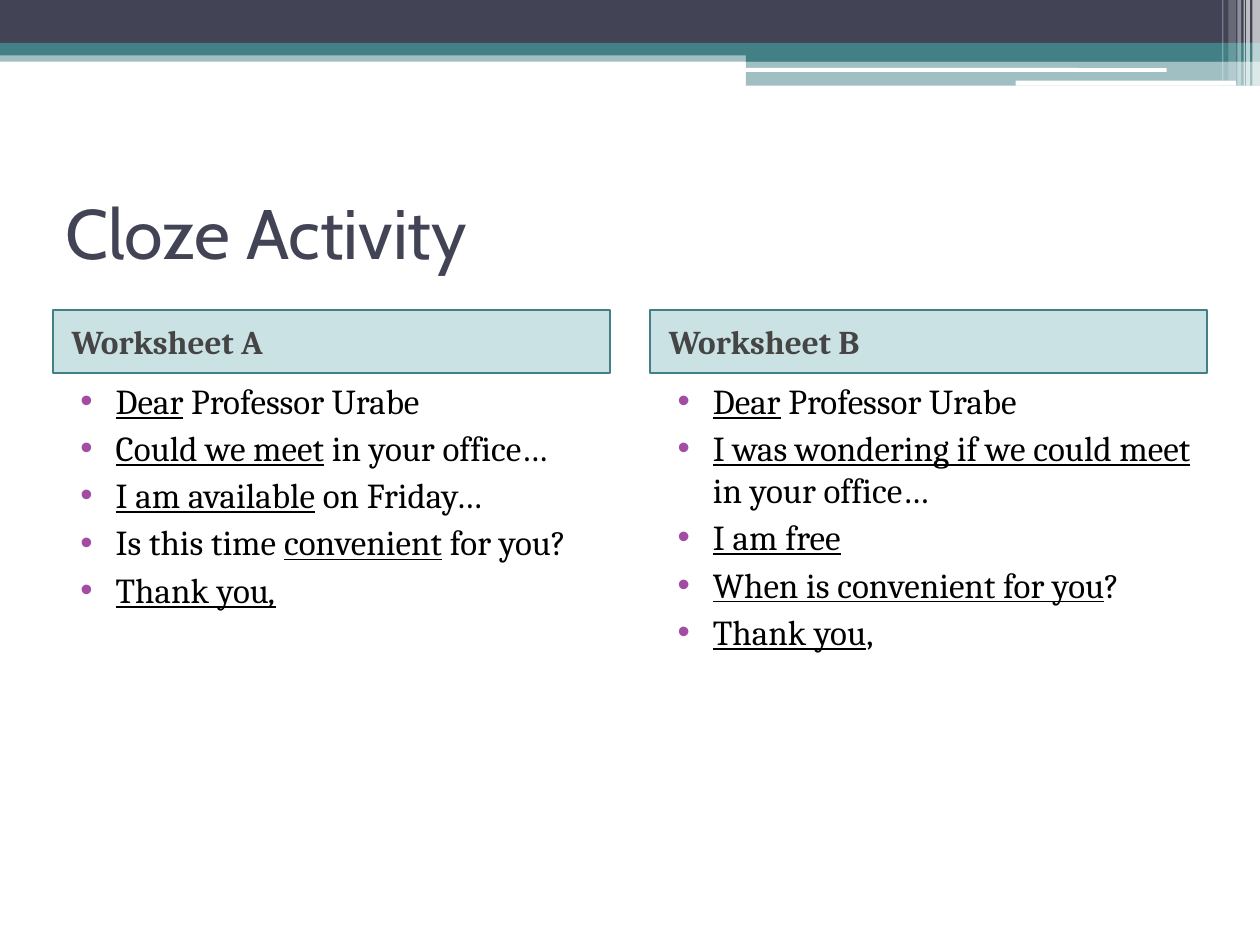
import pptx
import pptx.dml.color
import pptx.enum.shapes
import pptx.enum.text
import pptx.oxml
import pptx.oxml.ns
import pptx.util
from pptx.util import Inches

SHAPE = pptx.enum.shapes.MSO_SHAPE
ANCHOR = pptx.enum.text.MSO_ANCHOR
NAVY, TEAL, WHITE = "424456", "438086", "FFFFFF"
BODY_FONT = "Cambria"
COLUMN_WIDTH = 4.42

# left, top, width, height, colour, opacity in percent
BANDS = [
    (0, 0.4, 10, 0.09, TEAL, 50),
    (0, 0, 10, 0.34, NAVY, 100),
    (0, 0.34, 10, 0.1, TEAL, 100),
    (5.92, 0.39, 4.08, 0.1, TEAL, 100),
    (5.92, 0.48, 4.08, 0.2, TEAL, 50),
]
ROUNDED_BARS = [
    (5.91, 0.54, 3.35, 0.03, WHITE, 100),
    (8.06, 0.64, 1.75, 0.04, WHITE, 100),
]
# left, width, height, opacity in percent
STRIPES = [
    (9.94, 0.06, 0.68, 65),
    (9.89, 0.03, 0.68, 65),
    (9.87, 0.01, 0.68, 60),
    (9.82, 0.03, 0.68, 40),
    (9.75, 0.06, 0.64, 20),
    (9.7, 0.01, 0.64, 30),
]

# Each line is a list of (text, style); "u" underlines and "i" slants.
WORKSHEETS = [
    (0.42, "Worksheet A", [
        [("Dear", "u"), (" Professor Urabe", "")],
        [("Could we meet", "u"), (" in your office…", "")],
        [("I am available", "u"), (" on Friday…", "")],
        [("Is this time ", ""), ("convenient", "u"), (" for you?", "")],
        [("Thank you", "u"), (",", "ui")],
    ]),
    (5.16, "Worksheet B", [
        [("Dear", "u"), (" Professor Urabe", "")],
        [("I was wondering if we could meet", "u"), (" in your office…", "")],
        [("I am free", "u")],
        [("When is convenient for you", "u"), ("?", "")],
        [("Thank you", "u"), (",", "")],
    ]),
]


def rgb(value):
    return pptx.dml.color.RGBColor.from_string(value)


def style_font(font, name, size, color, bold=False):
    font.name = name
    font.size = pptx.util.Pt(size)
    font.color.rgb = rgb(color)
    font.bold = bold


def add_block(slide, left, top, width, height, color, opacity, kind=SHAPE.RECTANGLE):
    """Add a borderless shape with a solid, possibly translucent fill."""
    block = slide.shapes.add_shape(
        kind, Inches(left), Inches(top), Inches(width), Inches(height))
    block.shadow.inherit = False
    block.line.fill.background()
    block.fill.solid()
    block.fill.fore_color.rgb = rgb(color)
    if opacity < 100:
        color_element = block.fill._xPr.find(".//" + pptx.oxml.ns.qn("a:srgbClr"))
        color_element.append(pptx.oxml.parse_xml(
            f'<a:alpha {pptx.oxml.ns.nsdecls("a")} val="{opacity * 1000}"/>'))
    return block


def add_banner(slide):
    for band in BANDS:
        add_block(slide, *band)
    for bar in ROUNDED_BARS:
        add_block(slide, *bar, kind=SHAPE.ROUNDED_RECTANGLE)
    for left, width, height, opacity in STRIPES:
        add_block(slide, left, 0, width, height, WHITE, opacity)


def set_title(slide, text):
    title = slide.shapes.title
    title.left, title.top = Inches(0.42), Inches(1.25)
    title.width, title.height = Inches(9.17), Inches(1.17)
    frame = title.text_frame
    frame.text = text
    frame.auto_size = pptx.enum.text.MSO_AUTO_SIZE.NONE
    frame.vertical_anchor = ANCHOR.MIDDLE
    para = frame.paragraphs[0]
    para.alignment = pptx.enum.text.PP_ALIGN.LEFT
    style_font(para.font, "Cabin", 40, NAVY)


def format_paragraph(para, margin, indent=0):
    para.alignment = pptx.enum.text.PP_ALIGN.LEFT
    para.space_before = pptx.util.Pt(3)
    properties = para._p.get_or_add_pPr()
    properties.set("marL", str(Inches(margin)))
    properties.set("indent", str(Inches(indent)))


def add_bullet(para, color):
    properties = para._p.get_or_add_pPr()
    namespace = pptx.oxml.ns.nsdecls("a")
    for markup in (
        f'<a:buClr {namespace}><a:srgbClr val="{color}"/></a:buClr>',
        f'<a:buFont {namespace} typeface="Arial"/>',
        f'<a:buChar {namespace} char="•"/>',
    ):
        properties.append(pptx.oxml.parse_xml(markup))


def add_heading(slide, left, text):
    heading = add_block(slide, left, 2.46, COLUMN_WIDTH, 0.5, "328E97", 25)
    heading.line.color.rgb = rgb(TEAL)
    heading.line.width = pptx.util.Pt(1)
    frame = heading.text_frame
    frame.text = text
    frame.vertical_anchor = ANCHOR.MIDDLE
    para = frame.paragraphs[0]
    format_paragraph(para, 0.05)
    style_font(para.font, BODY_FONT, 19, "454545", bold=True)


def add_phrases(slide, left, lines):
    box = slide.shapes.add_textbox(
        Inches(left), Inches(2.96), Inches(COLUMN_WIDTH), Inches(4.25))
    frame = box.text_frame
    frame.word_wrap = True
    for index, spans in enumerate(lines):
        para = frame.add_paragraph() if index else frame.paragraphs[0]
        format_paragraph(para, 0.4, -0.28)
        add_bullet(para, "A04DA3")
        style_font(para.font, BODY_FONT, 20, "000000")
        for text, style in spans:
            span = para.add_run()
            span.text = text
            if "u" in style:
                span.font.underline = True
            if "i" in style:
                span.font.italic = True


def main():
    deck = pptx.Presentation()
    deck.slide_width, deck.slide_height = Inches(10), Inches(7.5)
    slide = deck.slides.add_slide(deck.slide_layouts.get_by_name("Title Only"))
    add_banner(slide)
    set_title(slide, "Cloze Activity")
    for left, heading, lines in WORKSHEETS:
        add_heading(slide, left, heading)
        add_phrases(slide, left, lines)
    deck.save("out.pptx")


if __name__ == "__main__":
    main()
